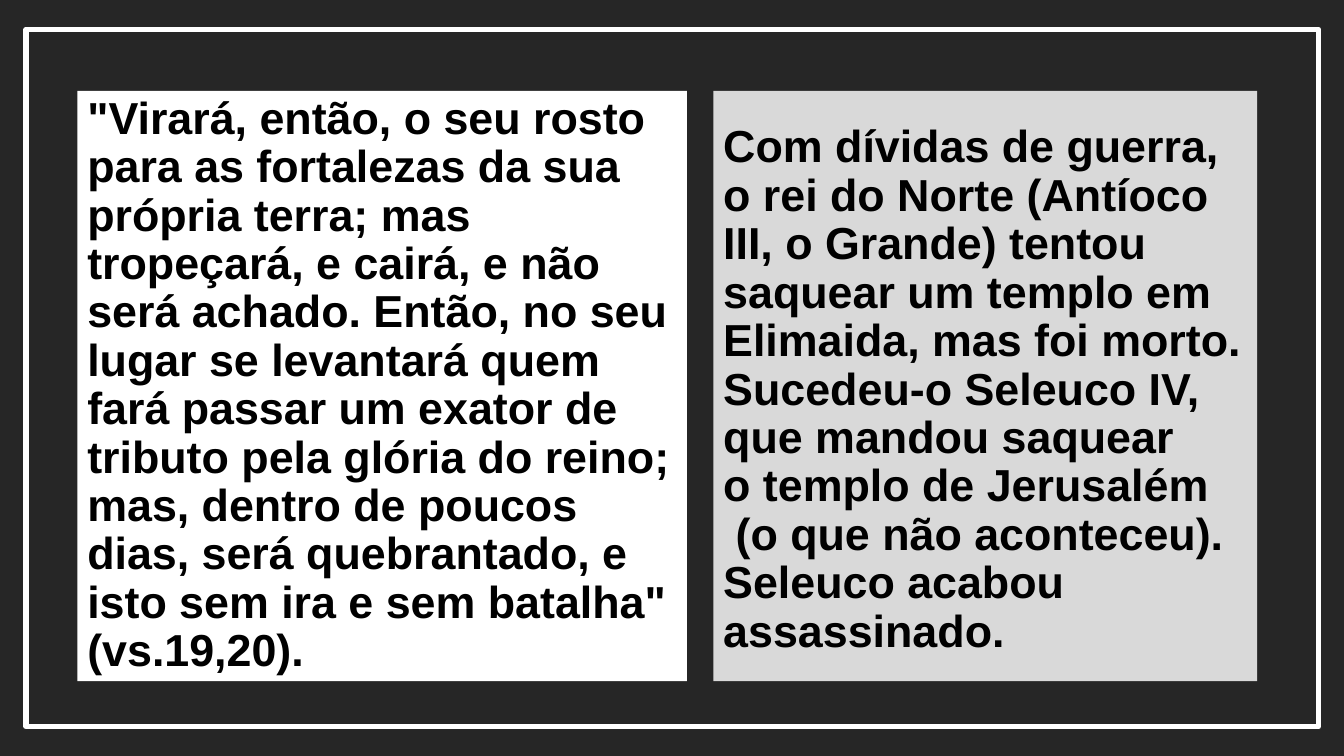
"""Build a slide with a framed dark backdrop and two text panels."""
from pptx import Presentation, util as u
from pptx.dml.color import RGBColor
from pptx.enum import shapes, text

THEME = {
    "backdrop": "262626", "frame": "FFFFFF", "verse": "FFFFFF",
    "comment": "D9D9D9", "ink": "000000", "font": "Arial", "size": 32,
}
SLIDE_SIZE = (960, 540)
FRAME = (18.75, 21, 923, 498)
PANEL_TOP, PANEL_HEIGHT, PANEL_LEFT, PANEL_GAP = 65, 421.5, 55.25, 18.75
PANELS = [
    {"fill": "verse", "width": 435.5, "top_inset": 3.6,
     "words": "\"Virará, então, o seu rosto para as fortalezas da sua própria terra; "
              "mas tropeçará, e cairá, e não será achado. Então, no seu lugar se "
              "levantará quem fará passar um exator de tributo pela glória do reino; "
              "mas, dentro de poucos dias, será quebrantado, e isto sem ira e sem "
              "batalha\" (vs.19,20)."},
    {"fill": "comment", "width": 388.5, "top_inset": 10,
     "words": "Com dívidas de guerra, o rei do Norte (Antíoco III, o Grande) tentou "
              "saquear um templo em Elimaida, mas foi morto. Sucedeu-o Seleuco IV, "
              "que mandou saquear\vo templo de Jerusalém\v (o que não aconteceu). "
              "Seleuco acabou assassinado."},
]


def color(name):
    return RGBColor.from_string(THEME[name])


def add_box(slide, box, fill=None, line=None, line_width=4):
    shape = slide.shapes.add_shape(shapes.MSO_SHAPE.RECTANGLE, *map(u.Pt, box))
    shape.shadow.inherit = False
    if fill:
        shape.fill.solid()
        shape.fill.fore_color.rgb = color(fill)
    else:
        shape.fill.background()
    if line:
        shape.line.color.rgb = color(line)
        shape.line.width = u.Pt(line_width)
    else:
        shape.line.fill.background()
    return shape


def write(shape, words, *, top_inset, size=THEME["size"], ink="ink", bold=True):
    frame = shape.text_frame
    frame.word_wrap = True
    frame.vertical_anchor = text.MSO_ANCHOR.MIDDLE
    frame.margin_left = frame.margin_right = u.Pt(7.2)
    frame.margin_top, frame.margin_bottom = u.Pt(top_inset), u.Pt(3.6)
    paragraph = frame.paragraphs[0]
    paragraph.text = words
    paragraph.alignment = text.PP_ALIGN.LEFT
    paragraph.line_spacing = 0.9
    for run in paragraph.runs:
        run.font.name = THEME["font"]
        run.font.size = u.Pt(size)
        run.font.bold = bold
        run.font.color.rgb = color(ink)


def main():
    presentation = Presentation()
    presentation.slide_width, presentation.slide_height = map(u.Pt, SLIDE_SIZE)
    slide = presentation.slides.add_slide(presentation.slide_layouts[6])
    add_box(slide, (0, 0, *SLIDE_SIZE), fill="backdrop")
    add_box(slide, FRAME, line="frame")
    left = PANEL_LEFT
    for panel in PANELS:
        box = (left, PANEL_TOP, panel["width"], PANEL_HEIGHT)
        shape = add_box(slide, box, fill=panel["fill"])
        write(shape, panel["words"], top_inset=panel["top_inset"])
        left += panel["width"] + PANEL_GAP
    presentation.save("out.pptx")


if __name__ == "__main__":
    main()
